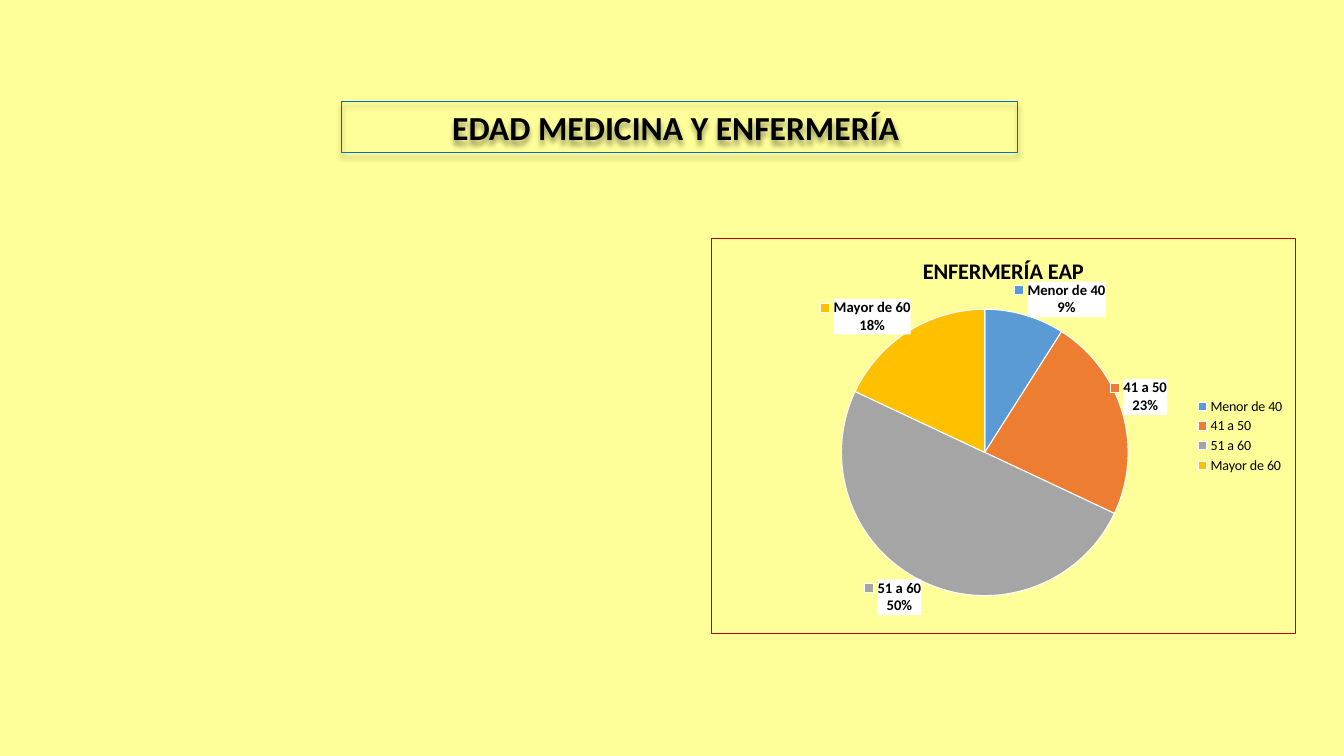
from copy import deepcopy

from lxml import etree
from pptx import Presentation
from pptx.chart.data import CategoryChartData
from pptx.dml.color import RGBColor
from pptx.enum.chart import XL_CHART_TYPE, XL_LABEL_POSITION as LABEL_POS, XL_LEGEND_POSITION as LEGEND_POS
from pptx.enum.shapes import MSO_SHAPE
from pptx.enum.text import MSO_ANCHOR, PP_ALIGN
from pptx.oxml import parse_xml
from pptx.oxml.ns import nsdecls, qn
from pptx.util import Inches, Pt

YELLOW = RGBColor(0xFF, 0xFF, 0x99)
BLUE = RGBColor(0x00, 0x70, 0xC0)
RED = RGBColor(0xC0, 0x00, 0x00)
BLACK = RGBColor(0x00, 0x00, 0x00)
WHITE = RGBColor(0xFF, 0xFF, 0xFF)
AGES = [
    ("Menor de 40", 9, RGBColor(0x5B, 0x9B, 0xD5)),
    ("41 a 50", 23, RGBColor(0xED, 0x7D, 0x31)),
    ("51 a 60", 50, RGBColor(0xA5, 0xA5, 0xA5)),
    ("Mayor de 60", 18, RGBColor(0xFF, 0xC0, 0x00)),
]
LABEL_SHIFTS = [(-0.02, 0.02), (-0.03, 0.01), (0, -0.02), (0.01, 0.02)]
PLOT_LAYOUT = {"x": 0.223, "y": 0.179, "w": 0.491, "h": 0.726}


def set_all(target, **values):
    for name, value in values.items():
        setattr(target, name, value)


def set_font(font, size, bold=False):
    set_all(font, name="Calibri", size=Pt(size), bold=bold)
    font.color.rgb = BLACK


def add_title(slide, left, top, width, height, text):
    sp = slide.shapes.add_shape(
        MSO_SHAPE.RECTANGLE, Inches(left), Inches(top), Inches(width), Inches(height))
    sp.fill.background()
    sp.line.color.rgb = BLUE
    sp.line.width = Pt(0.75)
    sp.shadow.inherit = False
    effects = sp._element.spPr.find(qn("a:effectLst"))
    effects.append(parse_xml(
        f'<a:outerShdw {nsdecls("a")} blurRad="{Pt(4)}" dist="{Pt(3)}" dir="5400000" '
        'rotWithShape="0"><a:srgbClr val="000000"><a:alpha val="40000"/></a:srgbClr></a:outerShdw>'))
    tf = sp.text_frame
    set_all(tf, word_wrap=True, vertical_anchor=MSO_ANCHOR.MIDDLE)
    p = tf.paragraphs[0]
    p.alignment = PP_ALIGN.CENTER
    r = p.add_run()
    r.text = text
    set_font(r.font, 24, True)


def solid_fill(color):
    return f'<a:solidFill><a:srgbClr val="{color}"/></a:solidFill>'


def chart_format(content):
    return parse_xml(f'<c:spPr {nsdecls("c", "a")}>{content}</c:spPr>')


def manual_layout(modes, **sizes):
    values = "".join(f'<c:{k} val="{v}"/>' for k, v in sizes.items())
    return parse_xml(
        f'<c:layout {nsdecls("c")}><c:manualLayout>{modes}{values}</c:manualLayout></c:layout>')


def place_plot(chart):
    area = chart._chartSpace.chart.plotArea
    for old in area.findall(qn("c:layout")):
        area.remove(old)
    modes = '<c:layoutTarget val="inner"/><c:xMode val="edge"/><c:yMode val="edge"/>'
    area.insert(0, manual_layout(modes, **PLOT_LAYOUT))


def format_labels(labels):
    set_font(labels.font, 10.5, True)
    set_all(labels, show_value=False, show_percentage=True, show_category_name=True,
            show_legend_key=True, number_format="0%", number_format_is_linked=False,
            position=LABEL_POS.OUTSIDE_END)
    xml = labels._element
    xml.find(qn("c:txPr")).addprevious(chart_format(solid_fill(WHITE)))
    separator = etree.Element(qn("c:separator"))
    separator.text = "\n"
    flags = [e for e in xml if etree.QName(e).localname in ("showPercent", "showBubbleSize")]
    flags[-1].addnext(separator)


def shift_labels(labels):
    xml = labels._element
    shared = [e for e in xml if etree.QName(e).localname != "showLeaderLines"]
    for i, (dx, dy) in enumerate(LABEL_SHIFTS):
        label = parse_xml(f'<c:dLbl {nsdecls("c")}><c:idx val="{i}"/></c:dLbl>')
        label.append(manual_layout("", x=dx, y=dy))
        label.extend([deepcopy(e) for e in shared])
        xml.insert(i, label)


def add_age_chart(slide, left, top, width, height, title):
    data = CategoryChartData()
    data.categories = [age for age, _, _ in AGES]
    data.add_series("Series 1", [share for _, share, _ in AGES])
    chart = slide.shapes.add_chart(
        XL_CHART_TYPE.PIE, Inches(left), Inches(top), Inches(width), Inches(height), data).chart
    set_font(chart.font, 10)
    border = chart_format(f'<a:noFill/><a:ln w="{Pt(0.75)}">{solid_fill(RED)}</a:ln>')
    chart._chartSpace.find(qn("c:txPr")).addprevious(border)

    set_all(chart, has_title=True, has_legend=True)
    tf = chart.chart_title.text_frame
    tf.text = title
    set_font(tf.paragraphs[0].runs[0].font, 16, True)
    set_all(chart.legend, position=LEGEND_POS.RIGHT, include_in_layout=False)
    place_plot(chart)

    plot = chart.plots[0]
    plot.vary_by_categories = True
    series = plot.series[0]
    for i, (_, _, color) in enumerate(AGES):
        slice_format = series.points[i].format
        slice_format.fill.solid()
        slice_format.fill.fore_color.rgb = color
        slice_format.line.color.rgb = WHITE
        slice_format.line.width = Pt(0.75)
    format_labels(series.data_labels)
    shift_labels(series.data_labels)


def main():
    prs = Presentation()
    set_all(prs, slide_width=Inches(13.33), slide_height=Inches(7.5))
    slide = prs.slides.add_slide(prs.slide_layouts[6])
    slide.background.fill.solid()
    slide.background.fill.fore_color.rgb = YELLOW
    add_title(slide, 3.39, 1.01, 6.7, 0.5, "EDAD MEDICINA Y ENFERMERÍA ")
    add_age_chart(slide, 7.05, 2.36, 5.8, 3.93, "ENFERMERÍA EAP")
    prs.save("out.pptx")


if __name__ == "__main__":
    main()
